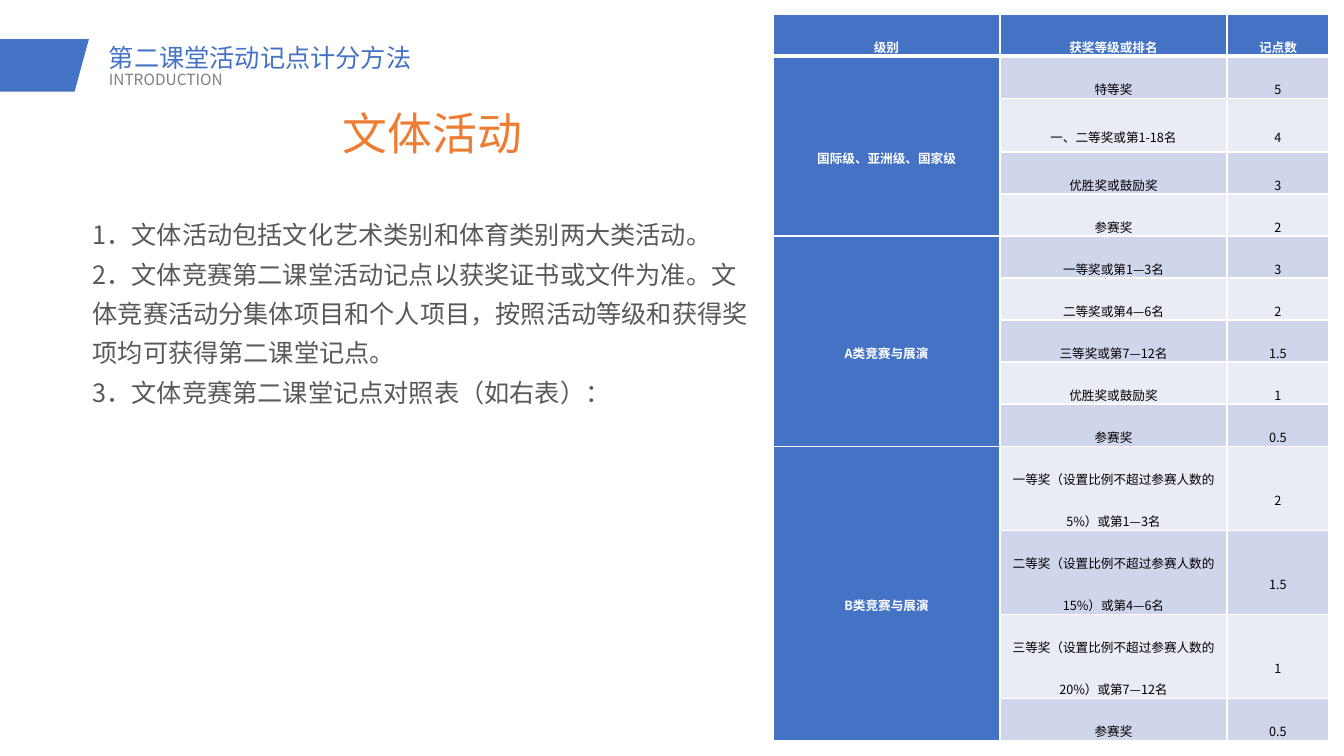
from dataclasses import dataclass

from lxml.etree import SubElement
from pptx import Presentation
from pptx.dml.color import RGBColor
from pptx.enum.text import MSO_ANCHOR, MSO_AUTO_SIZE, PP_ALIGN
from pptx.oxml.ns import qn
from pptx.util import Cm, Pt


@dataclass(frozen=True)
class Theme:
    font: str = "Noto Sans CJK SC"
    blue: str = "4472C4"
    orange: str = "ED7D31"
    text: str = "595959"
    gray: str = "808080"
    black: str = "000000"
    white: str = "FFFFFF"
    bands: tuple = ("E9EBF5", "CFD5EA")
    heading: int = 32
    body: int = 18
    caption: int = 11
    cell: int = 9


THEME = Theme()

RULES = [
    "1．文体活动包括文化艺术类别和体育类别两大类活动。",
    "2．文体竞赛第二课堂活动记点以获奖证书或文件为准。文体竞赛活动分集体项目和个人项目，"
    "按照活动等级和获得奖项均可获得第二课堂记点。",
    "3．文体竞赛第二课堂记点对照表（如右表）：",
]

HEADER = ("级别", "获奖等级或排名", "记点数")
# Each level: its awards as (award, points, row height in cm)
LOW, MID, TALL = 0.61, 1.35, 2.11
LEVELS = {
    "国际级、亚洲级、国家级": [
        ("特等奖", "5", LOW),
        ("一、二等奖或第1-18名", "4", MID),
        ("优胜奖或鼓励奖", "3", LOW),
        ("参赛奖", "2", LOW),
    ],
    "A类竞赛与展演": [
        ("一等奖或第1—3名", "3", LOW),
        ("二等奖或第4—6名", "2", LOW),
        ("三等奖或第7—12名", "1.5", LOW),
        ("优胜奖或鼓励奖", "1", LOW),
        ("参赛奖", "0.5", LOW),
    ],
    "B类竞赛与展演": [
        ("一等奖（设置比例不超过参赛人数的5%）或第1—3名", "2", TALL),
        ("二等奖（设置比例不超过参赛人数的15%）或第4—6名", "1.5", TALL),
        ("三等奖（设置比例不超过参赛人数的20%）或第7—12名", "1", TALL),
        ("参赛奖", "0.5", LOW),
    ],
}


def set_attrs(obj, values):
    for name, value in values.items():
        setattr(obj, name, value)


def place(sp, left, top, width, height):
    set_attrs(sp, dict(left=Cm(left), top=Cm(top), width=Cm(width), height=Cm(height)))


def write(tf, lines, size, color, align=PP_ALIGN.LEFT, spacing=1.0, bold=False):
    for i, line in enumerate(lines):
        p = tf.paragraphs[0] if i == 0 else tf.add_paragraph()
        set_attrs(p, dict(alignment=align, line_spacing=spacing,
                          space_before=Pt(0), space_after=Pt(0)))
        pPr = p._p.get_or_add_pPr()
        pPr.set("marL", "0")
        pPr.set("indent", "0")
        SubElement(pPr, qn("a:buNone"))
        r = p.add_run()
        r.text = line
        set_attrs(r.font, dict(name=THEME.font, size=Pt(size), bold=bold))
        r.font.color.rgb = RGBColor.from_string(color)
        rPr = r.font._element
        rPr.set("lang", "zh-CN")
        SubElement(rPr, qn("a:ea"), typeface=THEME.font)


def add_banner(s, left, top, width, height):
    # Slanted tab
    tab, slant = 2.24, 0.36
    fb = s.shapes.build_freeform(Cm(left), Cm(top))
    fb.add_line_segments([
        (Cm(left + tab), Cm(top)),
        (Cm(left + tab - slant), Cm(top + height)),
        (Cm(left), Cm(top + height)),
    ])
    sp = fb.convert_to_shape()
    sp.shadow.inherit = False
    sp.fill.solid()
    sp.fill.fore_color.rgb = RGBColor.from_string(THEME.blue)
    sp.line.fill.background()

    # Title and subtitle
    text_left = left + tab + 0.25
    title, subtitle = s.shapes.title, s.placeholders[1]
    place(title, text_left, top + 0.03, width - text_left, 1.19)
    place(subtitle, text_left, top + 0.71, width - text_left, 0.84)
    for sp, line, size, color in (
        (title, "第二课堂活动记点计分方法", THEME.body, THEME.blue),
        (subtitle, "INTRODUCTION", THEME.caption, THEME.gray),
    ):
        tf = sp.text_frame
        set_attrs(tf, dict(vertical_anchor=MSO_ANCHOR.TOP, word_wrap=True,
                           auto_size=MSO_AUTO_SIZE.NONE))
        write(tf, [line], size, color, spacing=0.9)


def add_rules(s, left, top, width, height):
    # Centred heading
    w, h = 5.03, 1.6
    sp = s.shapes.add_textbox(Cm(left + 6.3), Cm(top), Cm(w), Cm(h))
    tf = sp.text_frame
    set_attrs(tf, dict(word_wrap=False, auto_size=MSO_AUTO_SIZE.SHAPE_TO_FIT_TEXT))
    write(tf, ["文体活动"], THEME.heading, THEME.orange, PP_ALIGN.CENTER, 1.3)

    # Rules list
    offset = 3.05
    sp = s.placeholders[2]
    place(sp, left, top + offset, width, height - offset)
    tf = sp.text_frame
    set_attrs(tf, dict(vertical_anchor=MSO_ANCHOR.TOP, word_wrap=True,
                       auto_size=MSO_AUTO_SIZE.SHAPE_TO_FIT_TEXT))
    write(tf, RULES, THEME.body, THEME.text, spacing=1.3)


def add_borders(cell, row):
    tcPr = cell._tc.get_or_add_tcPr()
    widths = dict(L=1, R=1, T=3 if row == 1 else 1, B=3 if row == 0 else 1)
    for side, width in widths.items():
        ln = SubElement(tcPr, qn(f"a:ln{side}"), w=str(Pt(width)))
        fill = SubElement(ln, qn("a:solidFill"))
        SubElement(fill, qn("a:srgbClr"), val=THEME.white)


def format_cell(cell, row, text, strong):
    set_attrs(cell, dict(vertical_anchor=MSO_ANCHOR.MIDDLE,
                         margin_left=Cm(0.1), margin_right=Cm(0.1),
                         margin_top=0, margin_bottom=0))
    add_borders(cell, row)
    cell.fill.solid()
    fill = THEME.blue if strong else THEME.bands[row % 2]
    cell.fill.fore_color.rgb = RGBColor.from_string(fill)
    if text:
        write(cell.text_frame, [text], THEME.cell,
              THEME.white if strong else THEME.black,
              PP_ALIGN.CENTER, Pt(30), strong)


def add_points_table(s, left, top, width, height):
    rows = [(*HEADER, LOW)]
    spans = []
    for level, awards in LEVELS.items():
        spans.append((len(rows), len(rows) + len(awards) - 1))
        rows += [("" if i else level, *award) for i, award in enumerate(awards)]

    frame = s.shapes.add_table(len(rows), len(HEADER), Cm(left), Cm(top),
                               Cm(width), Cm(height))
    table = frame.table
    points_width = 2.57
    wide = (width - points_width) / 2
    for column, w in zip(table.columns, (wide, wide, points_width)):
        column.width = Cm(w)
    for row, (*texts, row_height) in enumerate(rows):
        table.rows[row].height = Cm(row_height)
        for col, text in enumerate(texts):
            format_cell(table.cell(row, col), row, text, row == 0 or col == 0)
    for first, last in spans:
        table.cell(first, 0).merge(table.cell(last, 0))


def main():
    prs = Presentation()
    set_attrs(prs, dict(slide_width=Cm(33.87), slide_height=Cm(19.05)))
    s = prs.slides.add_slide(prs.slide_layouts[3])
    add_banner(s, 0, 0.99, 24.39, 1.32)
    add_rules(s, 2.08, 2.13, 17.09, 8.08)
    add_points_table(s, 19.48, 0.36, 14.01, 16.41)
    prs.save("out.pptx")


if __name__ == "__main__":
    main()
